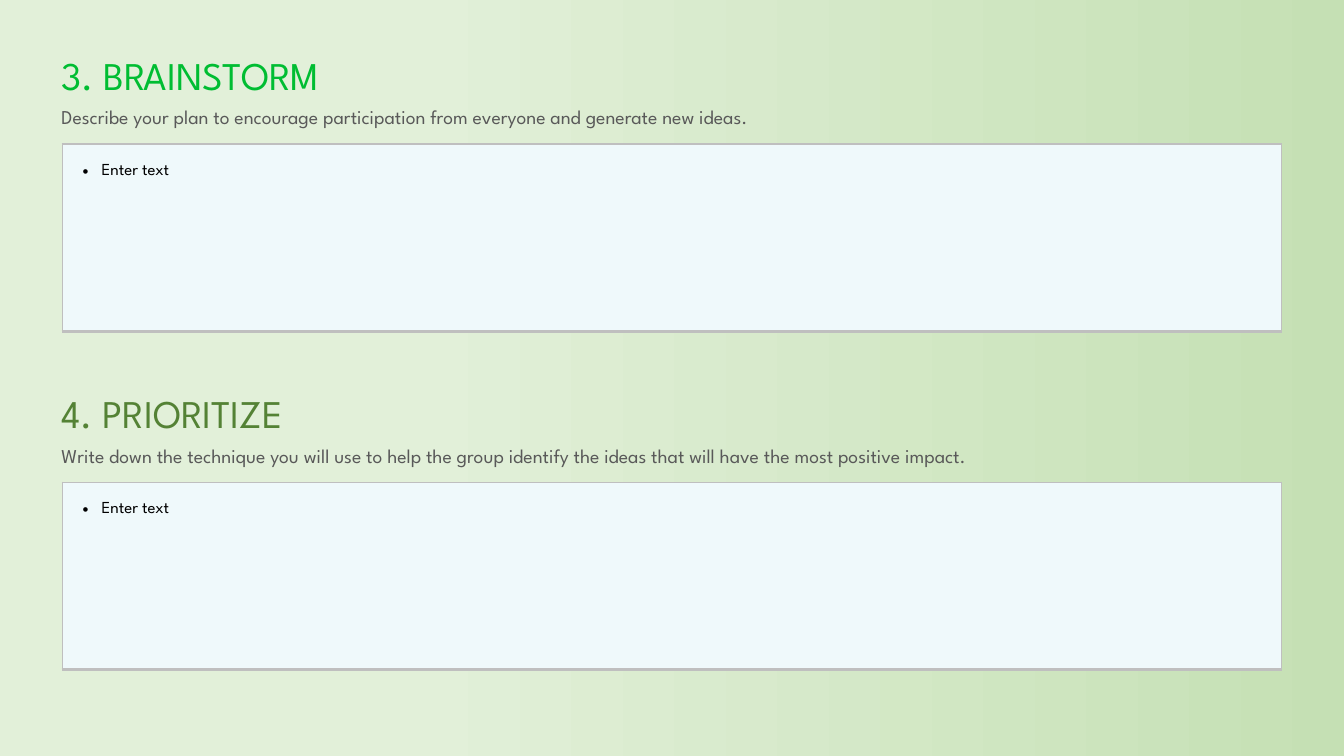
from lxml.etree import SubElement
from pptx import Presentation
from pptx.dml.color import RGBColor as RGB
from pptx.enum.text import MSO_ANCHOR as ANCHOR, MSO_AUTO_SIZE as AUTO
from pptx.oxml.ns import qn
from pptx.util import Cm, Pt

SECTIONS = [
    ("3. BRAINSTORM", "green", 7.82,
     "Describe your plan to encourage participation from everyone and generate new ideas.",
     ["Enter text"]),
    ("4. PRIORITIZE", "olive", 6.4,
     "Write down the technique you will use to help the group identify the ideas "
     "that will have the most positive impact.",
     ["Enter text"]),
]
COLORS = {"green": "00BD32", "olive": "548235", "gray": "595959", "black": "000000",
          "panel": "EFF9FB", "border": "BFBFBF", "bg_dark": "C5E0B4", "bg_light": "E2F0D9"}
BORDERS = {"a:lnL": 1, "a:lnR": 1, "a:lnT": 1, "a:lnB": 3}
FONT = "League Spartan"
TOP, PITCH = 0.99, 8.52
TEXT_LEFT, TEXT_WIDTH = 1.3, 31.04
TABLE_LEFT, TABLE_WIDTH, TABLE_HEIGHT = 1.57, 30.73, 4.72
INDENT = 0.48


def rgb(name):
    """Return the named colour."""
    return RGB.from_string(COLORS[name])


def write(p, text, size=12, color="black", spacing=None, bullet=False):
    """Put formatted text into a paragraph."""
    r = p.add_run()
    r.text = text
    r.font.name = FONT
    r.font.size = Pt(size)
    r.font.color.rgb = rgb(color)
    if spacing:
        p.line_spacing = spacing
    if bullet:
        pPr = p._p.get_or_add_pPr()
        pPr.set("marL", str(Cm(INDENT)))
        pPr.set("indent", str(-Cm(INDENT)))
        SubElement(pPr, qn("a:buFont"), typeface="Arial")
        SubElement(pPr, qn("a:buChar"), char="•")


def add_text(s, text, y, width, height, wrap=True, anchor=ANCHOR.TOP, **fmt):
    """Add a one-paragraph text box."""
    tf = s.shapes.add_textbox(Cm(TEXT_LEFT), Cm(y), Cm(width), Cm(height)).text_frame
    tf.word_wrap = wrap
    tf.auto_size = AUTO.SHAPE_TO_FIT_TEXT
    tf.vertical_anchor = anchor
    write(tf.paragraphs[0], text, **fmt)


def add_panel(s, items, y):
    """Add a bordered one-cell table holding bullets."""
    table = s.shapes.add_table(1, 1, Cm(TABLE_LEFT), Cm(y),
                               Cm(TABLE_WIDTH), Cm(TABLE_HEIGHT)).table
    table.first_row = table.horz_banding = False
    cell = table.cell(0, 0)
    cell.margin_left = Cm(0.51)
    cell.margin_top = cell.margin_right = cell.margin_bottom = Cm(0.25)
    tcPr = cell._tc.get_or_add_tcPr()
    for side, width in BORDERS.items():
        ln = SubElement(tcPr, qn(side), w=str(Pt(width)))
        fill = SubElement(ln, qn("a:solidFill"))
        SubElement(fill, qn("a:srgbClr"), val=COLORS["border"])
    cell.fill.solid()
    cell.fill.fore_color.rgb = rgb("panel")
    tf = cell.text_frame
    for i, item in enumerate(items):
        p = tf.add_paragraph() if i else tf.paragraphs[0]
        write(p, item, spacing=Pt(18), bullet=True)


def main():
    """Build and save the slide."""
    prs = Presentation()
    prs.slide_width, prs.slide_height = Cm(33.87), Cm(19.05)
    s = prs.slides.add_slide(prs.slide_layouts[6])
    bg = s.background.fill
    bg.gradient()
    bg.gradient_angle = 180
    for stop, (pos, color) in zip(bg.gradient_stops, [(0, "bg_dark"), (0.69, "bg_light")]):
        stop.position = pos
        stop.color.rgb = rgb(color)
    for i, (title, color, width, prompt, items) in enumerate(SECTIONS):
        y = TOP + i * PITCH
        add_panel(s, items, y + 2.64)
        add_text(s, prompt, y + 1.53, TEXT_WIDTH, 0.86, anchor=ANCHOR.MIDDLE,
                 size=14, color="gray")
        add_text(s, title, y, width, 1.55, wrap=False, size=28, color=color, spacing=1.15)
    prs.save("out.pptx")


if __name__ == "__main__":
    main()
